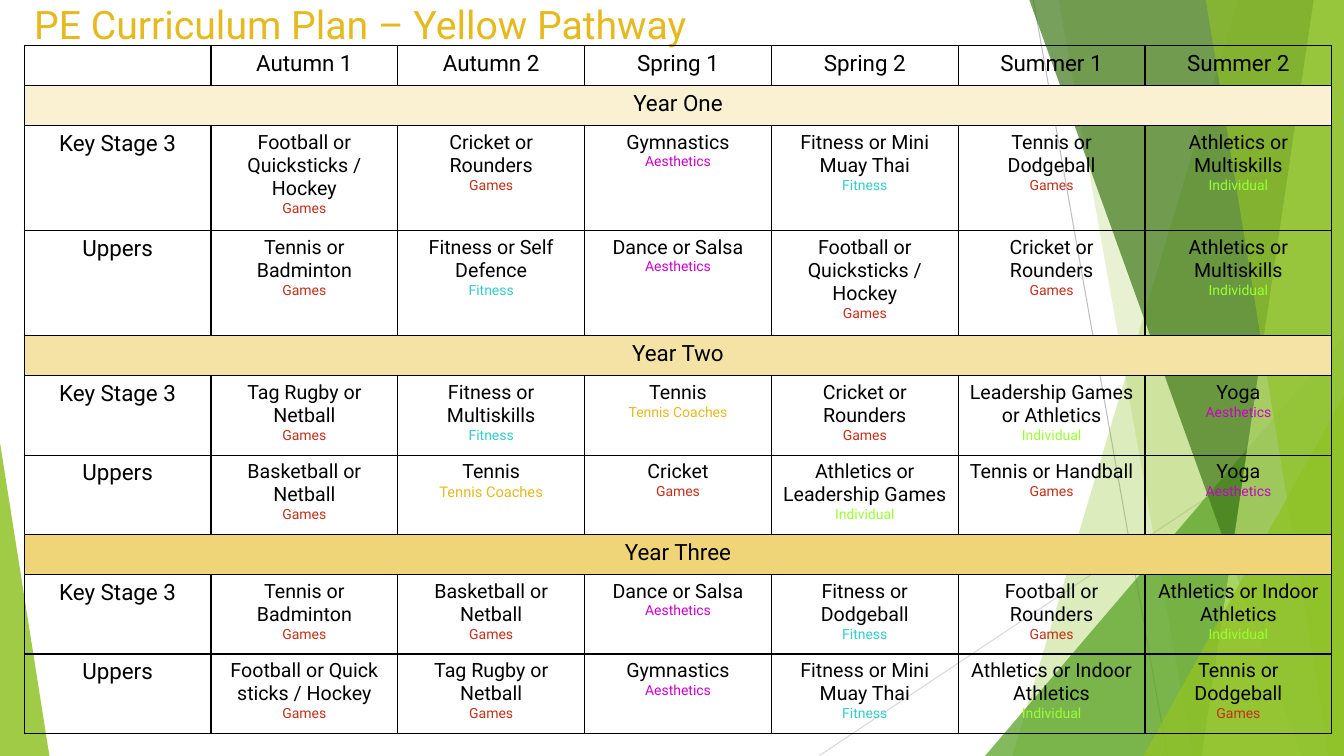
import pptx
import pptx.util
import pptx.dml.color
import pptx.enum.shapes
import pptx.enum.text
import pptx.oxml
import pptx.oxml.ns

theme = {
    "font": "Roboto", "title": 28, "head": 16, "sport": 14, "kind": 10, "wide kind": 10.5,
    "gold": "E6B91E", "black": "000000",
    "light": "90C226", "mid": "54A021", "dark": "3F7819", "pale": "C0E474",
    "Year One": "FAF1D2", "Year Two": "F5E3A5", "Year Three": "F0D578",
    "Games": "C42F1A", "Aesthetics": "CC00CC", "Fitness": "33CCCC",
    "Individual": "99FF33", "Tennis Coaches": "E6B91E",
}

deck = pptx.Presentation()
deck.slide_width = pptx.util.Inches(13.33)
deck.slide_height = pptx.util.Inches(7.5)
slide = deck.slides.add_slide(deck.slide_layouts[6])
shapes = slide.shapes
color = pptx.dml.color.RGBColor.from_string


def spot(across, down):
    return (pptx.util.Emu(round(deck.slide_width * across / 100)),
            pptx.util.Emu(round(deck.slide_height * down / 100)))


def ink(line, size, tint):
    for run in line.runs:
        run.font.name = theme["font"]
        run.font.size = pptx.util.Pt(size)
        run.font.color.rgb = color(tint)


for start, end, tint in [((76.89, 0), (86.87, 100), "BFBFBF"),
                         ((100, 53.73), (60.92, 100), "D9D9D9")]:
    line = shapes.add_connector(pptx.enum.shapes.MSO_CONNECTOR.STRAIGHT, *spot(*start), *spot(*end))
    line.line.color.rgb = color(tint)
    line.line.width = pptx.util.Pt(0.75)
    line._element.spPr.append(pptx.oxml.parse_xml(
        f'<a:effectLst {pptx.oxml.ns.nsdecls("a")}/>'))

panes = [
    ("band", 92.12, 75.32, "light", 30),
    ("band", 78.77, 88.75, "light", 20),
    ("right", 73.29, 44.4, "mid", 72),
    ("band", 76.59, 96.85, "dark", 70),
    ("band", 97.75, 89.42, "pale", 70),
    ("band", 89.72, 98.87, "light", 65),
    ("right", 85.07, 52.4, "light", 80),
    ("left", 3.68, 58.53, "light", 85),
]
for form, first, second, tint, alpha in panes:
    if form == "band":
        path = shapes.build_freeform(*spot(first, 0))
        path.add_line_segments([spot(100, 0), spot(100, 100), spot(second, 100)], close=True)
        pane = path.convert_to_shape()
    else:
        edge, span = (first, 100 - first) if form == "right" else (0, first)
        pane = shapes.add_shape(pptx.enum.shapes.MSO_SHAPE.ISOSCELES_TRIANGLE,
                                *spot(edge, second), *spot(span, 100 - second))
        pane.adjustments[0] = 1 if form == "right" else 0
    pane.shadow.inherit = False
    pane.line.fill.background()
    pane.fill.solid()
    pane.fill.fore_color.rgb = color(theme[tint])
    shade = pane._element.spPr.find(".//" + pptx.oxml.ns.qn("a:srgbClr"))
    shade.append(pptx.oxml.parse_xml(
        f'<a:alpha {pptx.oxml.ns.nsdecls("a")} val="{alpha * 1000}"/>'))

title = shapes.add_textbox(*spot(1.8, -0.67), *spot(96.4, 10)).text_frame
title.word_wrap = True
title.text = "PE Curriculum Plan – Yellow Pathway"
ink(title.paragraphs[0], theme["title"], theme["gold"])

plan = [
    ["", "Autumn 1", "Autumn 2", "Spring 1", "Spring 2", "Summer 1", "Summer 2"],
    ["Year One"],
    ["Key Stage 3", "Football or Quicksticks / Hockey\nGames", "Cricket or Rounders\nGames",
     "Gymnastics\nAesthetics", "Fitness or Mini Muay Thai\nFitness",
     "Tennis or Dodgeball\nGames", "Athletics or Multiskills\nIndividual"],
    ["Uppers", "Tennis or Badminton\nGames", "Fitness or Self Defence\nFitness",
     "Dance or Salsa\nAesthetics", "Football or Quicksticks / Hockey\nGames",
     "Cricket or Rounders\nGames", "Athletics or Multiskills\nIndividual"],
    ["Year Two"],
    ["Key Stage 3", "Tag Rugby or Netball\nGames", "Fitness or Multiskills\nFitness",
     "Tennis\nTennis Coaches", "Cricket or Rounders\nGames",
     "Leadership Games or Athletics\nIndividual", "Yoga\nAesthetics"],
    ["Uppers", "Basketball or Netball\nGames", "Tennis\nTennis Coaches",
     "Cricket\nGames", "Athletics or Leadership Games\nIndividual",
     "Tennis or Handball\nGames", "Yoga\nAesthetics"],
    ["Year Three"],
    ["Key Stage 3", "Tennis or Badminton\nGames", "Basketball or Netball\nGames",
     "Dance or Salsa\nAesthetics", "Fitness or Dodgeball\nFitness",
     "Football or Rounders\nGames", "Athletics or Indoor Athletics\nIndividual"],
    ["Uppers", "Football or Quick sticks / Hockey\nGames", "Tag Rugby or Netball\nGames",
     "Gymnastics\nAesthetics", "Fitness or Mini Muay Thai\nFitness",
     "Athletics or Indoor Athletics\nIndividual", "Tennis or Dodgeball\nGames"],
]
short, high, mid = 5.3, 13.9, 10.5
rows = [short, short, high, high, short, mid, mid, short, mid, mid]
table = shapes.add_table(len(plan), len(plan[0]), *spot(1.8, 6), *spot(97.3, sum(rows))).table
table.first_row = False
table.horz_banding = False

for r, (texts, tall) in enumerate(zip(plan, rows)):
    table.rows[r].height = spot(0, tall)[1]
    for cell in table.rows[r].cells:
        props = cell._tc.get_or_add_tcPr()
        for side in "LRTB":
            props.append(pptx.oxml.parse_xml(
                f'<a:ln{side} {pptx.oxml.ns.nsdecls("a")} w="12700"><a:solidFill>'
                f'<a:srgbClr val="{theme["black"]}"/></a:solidFill></a:ln{side}>'))
        cell.fill.background()
    if len(texts) == 1:
        year = table.cell(r, 0)
        year.merge(table.cell(r, len(plan[0]) - 1))
        year.fill.solid()
        year.fill.fore_color.rgb = color(theme[texts[0]])
    for c, text in enumerate(texts):
        frame = table.cell(r, c).text_frame
        frame.text = text
        lines = frame.paragraphs
        for line in lines:
            line.alignment = pptx.enum.text.PP_ALIGN.CENTER
        ink(lines[0], theme["sport" if len(lines) > 1 else "head"], theme["black"])
        if len(lines) > 1:
            kind = lines[1].text
            size = "wide kind" if (kind, c) == ("Tennis Coaches", 2) else "kind"
            ink(lines[1], theme[size], theme[kind])

deck.save("out.pptx")
